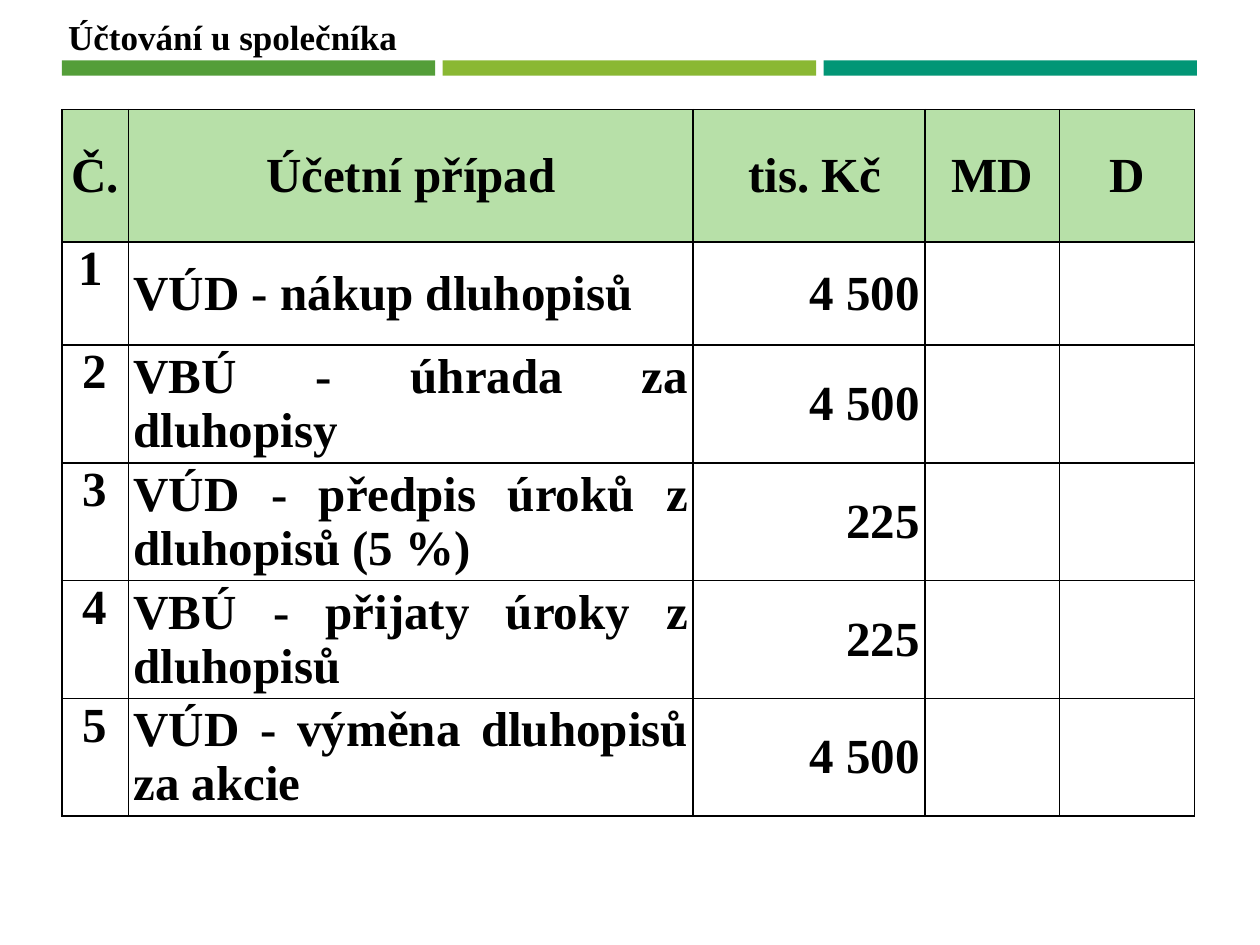
from lxml.etree import SubElement
from pptx import Presentation
from pptx.dml.color import RGBColor
from pptx.enum.shapes import MSO_SHAPE
from pptx.enum.text import MSO_ANCHOR as Anchor, MSO_AUTO_SIZE as AutoSize, PP_ALIGN as Align
from pptx.oxml.ns import qn
from pptx.util import Inches, Pt

FONT = "Times New Roman"
BLACK = "000000"
HEADER_FILL = "B7E0A8"
BAR_COLOURS = ["549E39", "8AB833", "029676"]
COLUMN_WIDTHS = [0.53, 4.48, 1.84, 1.07, 1.07]
HEADER_HEIGHT = 1.05
HEADERS = ["Č.", "Účetní případ", " tis. Kč", "MD", "D"]
ENTRIES = [
    (" 1", "VÚD - nákup dluhopisů", "4 500"),
    ("2", "VBÚ - úhrada za dluhopisy", "4 500"),
    ("3", "VÚD - předpis úroků z dluhopisů (5 %)", "225"),
    ("4", "VBÚ - přijaty úroky z dluhopisů", "225"),
    ("5", "VÚD - výměna dluhopisů za akcie", "4 500"),
]


def set_fill(target, colour):
    target.fill.solid()
    target.fill.fore_color.rgb = RGBColor.from_string(colour)


def format_text(paragraph, size, alignment):
    paragraph.alignment = alignment
    for run in paragraph.runs:
        run.font.name = FONT
        run.font.size = Pt(size)
        run.font.bold = True
        run.font.color.rgb = RGBColor.from_string(BLACK)


def add_title(slide, left, top, width, height):
    title = slide.shapes.title
    title.left, title.top = Inches(left), Inches(top)
    title.width, title.height = Inches(width), Inches(height)
    frame = title.text_frame
    frame.text = "Účtování u společníka"
    frame.word_wrap = False
    frame.auto_size = AutoSize.SHAPE_TO_FIT_TEXT
    frame.vertical_anchor = Anchor.TOP
    format_text(frame.paragraphs[0], 20, Align.LEFT)


def add_bars(slide, left, top, width, height, gap=0.06):
    bar_width = (width - gap * (len(BAR_COLOURS) - 1)) / len(BAR_COLOURS)
    for index, colour in enumerate(BAR_COLOURS):
        bar_left = left + index * (bar_width + gap)
        bar = slide.shapes.add_shape(
            MSO_SHAPE.RECTANGLE,
            Inches(bar_left), Inches(top), Inches(bar_width), Inches(height))
        bar.shadow.inherit = False
        set_fill(bar, colour)
        bar.line.fill.background()


def add_borders(cell):
    properties = cell._tc.get_or_add_tcPr()
    for position, side in enumerate(["lnL", "lnR", "lnT", "lnB"]):
        line = properties.makeelement(qn(f"a:{side}"), {"w": str(Pt(1))})
        properties.insert(position, line)
        fill = SubElement(line, qn("a:solidFill"))
        SubElement(fill, qn("a:srgbClr"), val=BLACK)


def fill_cell(cell, text, alignment, anchor):
    cell.margin_left = cell.margin_right = Inches(0.04)
    cell.margin_top = cell.margin_bottom = 0
    cell.vertical_anchor = anchor
    paragraph = cell.text_frame.paragraphs[0]
    paragraph.text = text
    format_text(paragraph, 28, alignment)


def add_entries_table(slide, left, top, width, height):
    row_count = len(ENTRIES) + 1
    table = slide.shapes.add_table(
        row_count, len(HEADERS),
        Inches(left), Inches(top), Inches(width), Inches(height)).table
    table.horz_banding = False
    for column, column_width in zip(table.columns, COLUMN_WIDTHS):
        column.width = Inches(column_width)
    for row in table.rows:
        row.height = Inches((height - HEADER_HEIGHT) / len(ENTRIES))
    table.rows[0].height = Inches(HEADER_HEIGHT)

    for cell in table.iter_cells():
        set_fill(cell, "FFFFFF")
        add_borders(cell)
    for column_index, header in enumerate(HEADERS):
        cell = table.cell(0, column_index)
        set_fill(cell, HEADER_FILL)
        fill_cell(cell, header, Align.CENTER, Anchor.MIDDLE)
    for row_index, (number, entry, amount) in enumerate(ENTRIES, start=1):
        number_alignment = Align.LEFT if row_index == 1 else Align.CENTER
        fill_cell(table.cell(row_index, 0), number, number_alignment, Anchor.TOP)
        fill_cell(table.cell(row_index, 1), entry, Align.JUSTIFY, Anchor.MIDDLE)
        fill_cell(table.cell(row_index, 2), amount, Align.RIGHT, Anchor.MIDDLE)


def main():
    presentation = Presentation()
    presentation.slide_width = Inches(10)
    presentation.slide_height = Inches(7.5)
    slide = presentation.slides.add_slide(presentation.slide_layouts[5])
    add_bars(slide, 0.49, 0.48, 9.01, 0.12)
    add_title(slide, 0.44, 0.07, 2.83, 0.44)
    add_entries_table(slide, 0.49, 0.87, sum(COLUMN_WIDTHS), 5.15)
    presentation.save("out.pptx")


if __name__ == "__main__":
    main()
